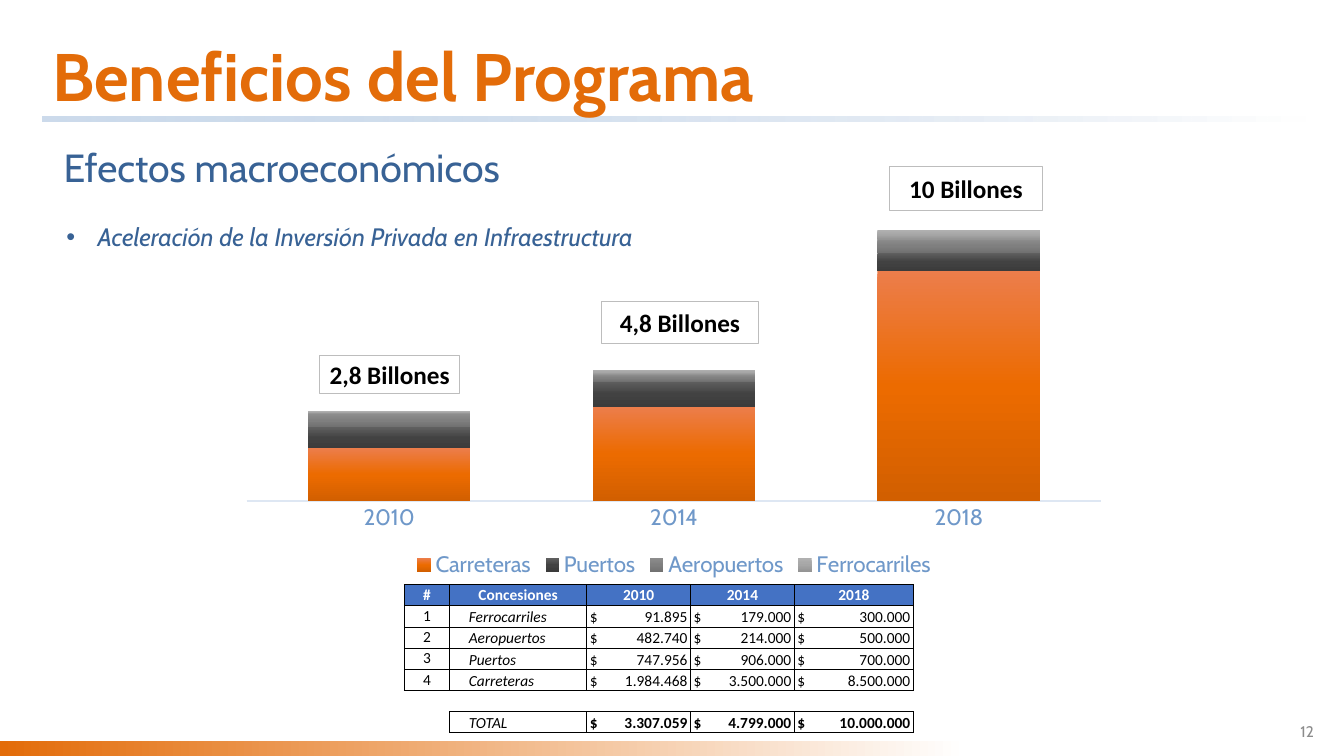
from lxml import etree
from pptx import Presentation
from pptx.chart.data import CategoryChartData
from pptx.dml.color import RGBColor
from pptx.enum.chart import XL_CHART_TYPE, XL_LEGEND_POSITION, XL_TICK_MARK
from pptx.enum.shapes import MSO_SHAPE
from pptx.enum.text import MSO_ANCHOR, PP_ALIGN
from pptx.oxml import parse_xml
from pptx.oxml.ns import nsdecls, qn
from pptx.util import Inches, Pt

ORANGE, BLUE, LIGHT_BLUE = "E36C09", "386295", "6F98C9"
YEARS = ["2010", "2014", "2018"]
SERIES = [
    ("Carreteras", [23, 41, 100], ["EC7D4B", "EC6B00", "D25F00"]),
    ("Puertos", [9, 11, 8], ["5F5F5F", "424242", "3B3B3B"]),
    ("Aeropuertos", [6, 3, 6], ["8D8D8D", "7F7F7F", "717171"]),
    ("Ferrocarriles", [1, 2, 4], ["B0B0B0", "A6A6A6", "949494"]),
]
CALLOUTS = [
    ("2,8 Billones", 3.17, 3.53, 1.39, 0.37),
    ("4,8 Billones", 5.97, 2.99, 1.55, 0.42),
    ("10 Billones", 8.82, 1.65, 1.52, 0.44),
]
CONCESSIONS = [
    ["#", "Concesiones", *YEARS],
    ["1", "Ferrocarriles", "91.895", "179.000", "300.000"],
    ["2", "Aeropuertos", "482.740", "214.000", "500.000"],
    ["3", "Puertos", "747.956", "906.000", "700.000"],
    ["4", "Carreteras", "1.984.468", "3.500.000", "8.500.000"],
    ["", "", "", "", ""],
    ["", "TOTAL", "3.307.059", "4.799.000", "10.000.000"],
]
COLUMN_WIDTHS = [0.45, 1.36, 1.03, 1.03, 1.18]
ROW_HEIGHT = 0.21


def color(value):
    return RGBColor.from_string(value)


def set_font(font, size, value, name="Cabin", bold=False, italic=False):
    font.size, font.name, font.bold, font.italic = Pt(size), name, bold, italic
    font.color.rgb = color(value)


def set_gradient(fill, properties, colors, angle, first_alpha=100):
    """Replace the fill of a shape or series with evenly spaced colour stops."""
    fill.solid()
    stops = ""
    for index, value in enumerate(colors):
        position = 100000 * index // (len(colors) - 1)
        alpha = 100 if index else first_alpha
        stops += (f'<a:gs pos="{position}"><a:srgbClr val="{value}">'
                  f'<a:alpha val="{alpha * 1000}"/></a:srgbClr></a:gs>')
    gradient = parse_xml(
        f'<a:gradFill {nsdecls("a")} rotWithShape="1"><a:gsLst>{stops}</a:gsLst>'
        f'<a:lin ang="{angle * 60000}" scaled="0"/></a:gradFill>')
    properties.replace(properties.find(qn("a:solidFill")), gradient)


def add_band(page, left, top, width, height, colors, first_alpha=100):
    band = page.shapes.add_shape(
        MSO_SHAPE.RECTANGLE, Inches(left), Inches(top), Inches(width), Inches(height))
    band.shadow.inherit = False
    band.line.fill.background()
    set_gradient(band.fill, band._element.spPr, colors, 0, first_alpha)


def add_text(page, text, left, top, width, height, size, value, wrap=True, **style):
    box = page.shapes.add_textbox(Inches(left), Inches(top), Inches(width), Inches(height))
    box.text_frame.word_wrap = wrap
    para = box.text_frame.paragraphs[0]
    para.text = text
    set_font(para.font, size, value, **style)
    return box.text_frame


def add_bullet_text(page, text, left, top, width, height):
    para = add_text(page, text, left, top, width, height, 18, BLUE,
                    wrap=False, italic=True).paragraphs[0]
    properties = para._p.get_or_add_pPr()
    properties.set("marL", str(Inches(0.31)))
    properties.set("indent", str(-Inches(0.31)))
    bullet_font = parse_xml(f'<a:buFont {nsdecls("a")} typeface="Arial"/>')
    bullet = parse_xml(f'<a:buChar {nsdecls("a")} char="•"/>')
    properties.insert(0, bullet_font)
    properties.insert(1, bullet)


def add_callout(page, text, left, top, width, height):
    box = page.shapes.add_shape(
        MSO_SHAPE.RECTANGLE, Inches(left), Inches(top), Inches(width), Inches(height))
    box.shadow.inherit = False
    box.fill.solid()
    box.fill.fore_color.rgb = color("FFFFFF")
    box.line.color.rgb = color("BDBDBD")
    box.line.width = Pt(0.75)
    frame = box.text_frame
    frame.vertical_anchor = MSO_ANCHOR.MIDDLE
    frame.margin_left = frame.margin_right = Inches(0.05)
    para = frame.paragraphs[0]
    para.text = text
    para.alignment = PP_ALIGN.CENTER
    set_font(para.font, 18, "000000", "Calibri", bold=True)


def add_investment_chart(page):
    data = CategoryChartData()
    data.categories = YEARS
    for name, values, _ in SERIES:
        data.add_series(name, values)
    chart = page.shapes.add_chart(
        XL_CHART_TYPE.COLUMN_STACKED, Inches(2.27), Inches(1.65),
        Inches(8.83), Inches(4.13), data).chart
    set_font(chart.font, 16, LIGHT_BLUE)
    chart.has_title = False
    chart.has_legend = True
    chart.legend.position = XL_LEGEND_POSITION.BOTTOM
    chart.legend.include_in_layout = False
    set_font(chart.legend.font, 16, LIGHT_BLUE)

    years = chart.category_axis
    years.major_tick_mark = XL_TICK_MARK.NONE
    years.format.line.color.rgb = color("DEE7F3")
    years.format.line.width = Pt(1)
    set_font(years.tick_labels.font, 16, LIGHT_BLUE)
    amounts = chart.value_axis
    amounts.visible = False
    amounts.has_major_gridlines = False
    amounts.minimum_scale, amounts.maximum_scale = 0, 120

    plot = chart.plots[0]
    plot.gap_width, plot.overlap, plot.vary_by_categories = 75, 100, False
    for series, (_, _, colors) in zip(plot.series, SERIES):
        set_gradient(series.format.fill, series._element.get_or_add_spPr(), colors, 90)

    area = chart._chartSpace.chart.plotArea
    for layout in area.findall(qn("c:layout")):
        area.remove(layout)
    area.insert(0, parse_xml(
        f'<c:layout {nsdecls("c")}><c:manualLayout><c:layoutTarget val="inner"/>'
        '<c:xMode val="edge"/><c:yMode val="edge"/><c:x val="0.02"/><c:y val="0.142"/>'
        '<c:w val="0.96"/><c:h val="0.662"/></c:manualLayout></c:layout>'))


def has_text(row, column):
    return (0 <= row < len(CONCESSIONS) and 0 <= column < len(COLUMN_WIDTHS)
            and CONCESSIONS[row][column] != "")


def set_borders(cell, row, column):
    """Draw each side that touches a filled-in cell."""
    sides = [("L", 0, -1), ("R", 0, 1), ("T", -1, 0), ("B", 1, 0)]
    for index, (side, down, right) in enumerate(sides):
        drawn = has_text(row, column) or has_text(row + down, column + right)
        paint = '<a:solidFill><a:srgbClr val="000000"/></a:solidFill>' if drawn else "<a:noFill/>"
        cell._tc.get_or_add_tcPr().insert(index, parse_xml(
            f'<a:ln{side} {nsdecls("a")} w="{Pt(0.5)}">{paint}</a:ln{side}>'))


def fill_cell(cell, row, column):
    text = CONCESSIONS[row][column]
    header, total = row == 0, row == len(CONCESSIONS) - 1
    name, amount = column == 1 and not header, column > 1 and not header
    cell.margin_left = Inches(0.19 if name else 0.03 if amount else 0)
    cell.margin_right = cell.margin_top = cell.margin_bottom = 0
    cell.vertical_anchor = MSO_ANCHOR.BOTTOM if name or amount else MSO_ANCHOR.MIDDLE
    if header or (name and text):
        cell.fill.solid()
        cell.fill.fore_color.rgb = color("4472C4" if header else "FFFFFF")
    else:
        cell.fill.background()
    para = cell.text_frame.paragraphs[0]
    if not text:
        etree.SubElement(para._p, qn("a:endParaRPr"), sz="1100")
    elif amount:
        para.text = f"$\t{text}"
        stop = Inches(COLUMN_WIDTHS[column] - 0.06)
        para._p.get_or_add_pPr().append(parse_xml(
            f'<a:tabLst {nsdecls("a")}><a:tab pos="{stop}" algn="r"/></a:tabLst>'))
    else:
        para.text = text
        para.alignment = PP_ALIGN.LEFT if name else PP_ALIGN.CENTER
    set_font(para.font, 11, "FFFFFF" if header else "000000", "Calibri",
             bold=header or (total and amount), italic=name)
    set_borders(cell, row, column)


def add_concessions_table(page):
    table = page.shapes.add_table(
        len(CONCESSIONS), len(COLUMN_WIDTHS), Inches(4.01), Inches(5.8),
        Inches(sum(COLUMN_WIDTHS)), Inches(ROW_HEIGHT * len(CONCESSIONS))).table
    table.first_row = table.horz_banding = False
    style = table._tbl.tblPr.find(qn("a:tableStyleId"))
    style.text = "{2D5ABB26-0587-4C30-8999-92F81FD0307C}"
    for column, width in enumerate(COLUMN_WIDTHS):
        table.columns[column].width = Inches(width)
    for row in range(len(CONCESSIONS)):
        table.rows[row].height = Inches(ROW_HEIGHT)
        for column in range(len(COLUMN_WIDTHS)):
            fill_cell(table.cell(row, column), row, column)


def main():
    deck = Presentation()
    deck.slide_width, deck.slide_height = Inches(13.33), Inches(7.5)
    page = deck.slides.add_slide(deck.slide_layouts[6])
    add_band(page, 0.42, 1.16, 12.53, 0.05, ["9AB7D9", "FFFFFF"], first_alpha=50)
    add_band(page, 0, 7.35, 9.59, 0.15, [ORANGE, "FFFFFF"])
    add_investment_chart(page)
    number = add_text(page, "12", 12.65, 7.06, 0.63, 0.4, 11, "8C8C8C")
    number.vertical_anchor = MSO_ANCHOR.MIDDLE
    number.paragraphs[0].alignment = PP_ALIGN.CENTER
    for callout in CALLOUTS:
        add_callout(page, *callout)
    add_text(page, "Beneficios del Programa", 0.42, 0.29, 12.53, 0.82, 48, ORANGE, bold=True)
    subtitle = add_text(page, "Efectos macroeconómicos", 0.63, 1.42, 4.39, 0.47, 28, BLUE)
    subtitle.margin_left = subtitle.margin_right = 0
    subtitle.margin_top = subtitle.margin_bottom = 0
    add_bullet_text(page, "Aceleración de la Inversión Privada en Infraestructura",
                    0.56, 2.15, 5.97, 0.4)
    add_concessions_table(page)
    deck.save("out.pptx")


if __name__ == "__main__":
    main()
